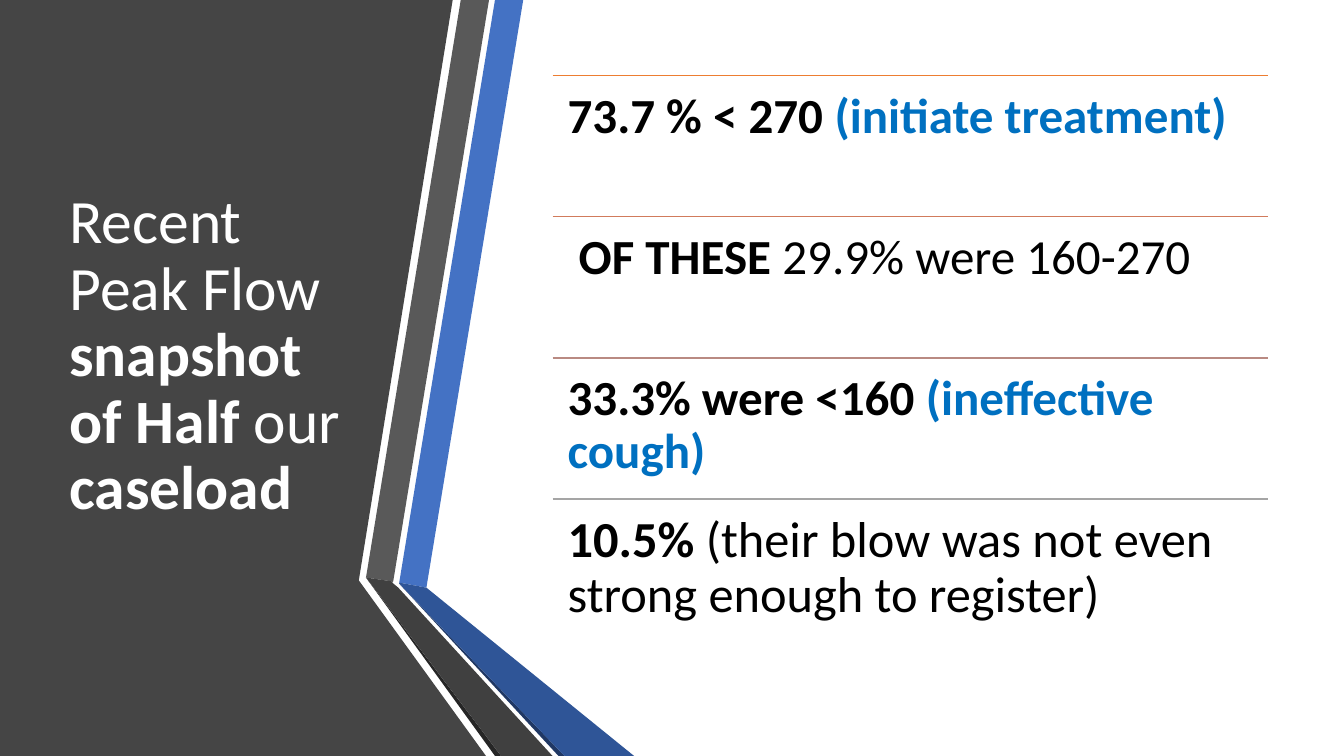
from lxml.etree import SubElement
from pptx import Presentation
from pptx.dml.color import RGBColor
from pptx.enum.shapes import MSO_CONNECTOR
from pptx.enum.text import MSO_ANCHOR
from pptx.oxml.ns import qn
from pptx.util import Inches, Pt

# Content: each run is (text, bold, colour name)
TITLE = [
    ("Recent Peak Flow ", False, "light"),
    ("snapshot of Half ", True, "light"),
    ("our ", False, "light"),
    ("caseload", True, "light"),
]
FINDINGS = [
    {"rule": "ED7D31", "size": "finding", "runs": [
        ("73.7 % < 270 ", True, "dark"),
        ("(initiate treatment)", True, "accent")]},
    {"rule": "D17B5C", "size": "finding", "runs": [
        (" ", False, "dark"),
        ("OF THESE ", True, "dark"),
        ("29.9% were 160-270", False, "dark")]},
    {"rule": "B98A82", "size": "finding", "runs": [
        ("33.3% were <160 ", True, "dark"),
        ("(ineffective cough)", True, "accent")]},
    {"rule": "A5A5A5", "size": "last_finding", "runs": [
        ("10.5% ", True, "dark"),
        ("(their blow was not even strong enough to register)", False, "dark")]},
]

# Outlines of the side panel and the folded ribbons, back to front
PANEL_SHAPES = [
    ("panel", [(0, 0), (4.49, 0), (3.56, 5.75), (3.56, 5.76), (4.82, 7.5), (0, 7.5)]),
    ("blue", [(3.96, 5.78), (4.23, 5.83), (5.19, 0), (4.91, 0)]),
    ("grey", [(4.85, 0), (4.57, 0), (3.63, 5.73), (3.9, 5.77)]),
    ("grey_edge", [(3.63, 5.73), (4.91, 7.5), (4.97, 7.5)]),
    ("blue_edge", [(3.96, 5.79), (5.54, 7.5), (5.6, 7.5)]),
    ("blue_fold", [(3.96, 5.79), (5.6, 7.5), (6.29, 7.5), (4.23, 5.83), (3.96, 5.78)]),
    ("grey_fold", [(5.48, 7.5), (3.95, 5.83), (3.89, 5.78), (3.9, 5.77),
                   (3.63, 5.73), (4.97, 7.5)]),
]

THEME = {
    "font": "Calibri",
    "sizes": {"title": 44, "finding": 35, "last_finding": 36},
    "colours": {
        "light": "FFFFFF", "dark": "000000", "accent": "0070C0",
        "panel": "454545", "blue": "4472C4", "blue_edge": "203864",
        "blue_fold": "2F5597", "grey": "595959", "grey_edge": "262626",
        "grey_fold": "404040",
    },
}
LIST_LEFT, LIST_TOP, LIST_WIDTH, ROW_HEIGHT = 5.48, 0.75, 7.1, 1.4


def colour(name):
    return RGBColor.from_string(THEME["colours"][name])


def add_outline(slide, fill_name, points):
    corners = [(Inches(x), Inches(y)) for x, y in points]
    builder = slide.shapes.build_freeform(*corners[0])
    builder.add_line_segments(corners[1:], close=True)
    shape = builder.convert_to_shape()
    shape.shadow.inherit = False
    shape.fill.solid()
    shape.fill.fore_color.rgb = colour(fill_name)
    shape.line.fill.background()


def add_text(slide, box, runs, size_name, frame_format):
    shape = slide.shapes.add_textbox(*[Inches(value) for value in box])
    frame = shape.text_frame
    for name, value in {"word_wrap": True, **frame_format}.items():
        setattr(frame, name, value)
    paragraph = frame.paragraphs[0]
    paragraph.line_spacing = 0.9
    for text, bold, colour_name in runs:
        run = paragraph.add_run()
        run.text = text
        font_format = {"name": THEME["font"], "bold": bold,
                       "size": Pt(THEME["sizes"][size_name])}
        for name, value in font_format.items():
            setattr(run.font, name, value)
        run.font.color.rgb = colour(colour_name)


def add_rule(slide, top, rule_colour):
    connector = slide.shapes.add_connector(
        MSO_CONNECTOR.STRAIGHT, Inches(LIST_LEFT), Inches(top),
        Inches(LIST_LEFT + LIST_WIDTH), Inches(top))
    connector.line.color.rgb = RGBColor.from_string(rule_colour)
    connector.line.width = Pt(1)
    SubElement(connector._element.spPr, qn("a:effectLst"))


def main():
    presentation = Presentation()
    presentation.slide_width = Inches(13.33)
    presentation.slide_height = Inches(7.5)
    slide = presentation.slides.add_slide(presentation.slide_layouts[6])

    # Side panel with ribbons
    for fill_name, points in PANEL_SHAPES:
        add_outline(slide, fill_name, points)

    # Title
    add_text(slide, (0.59, 0.75, 3.04, 5.58), TITLE, "title",
             {"vertical_anchor": MSO_ANCHOR.MIDDLE})

    # Findings, each under its own rule
    margins = {f"margin_{side}": Inches(0.15)
               for side in ("left", "top", "right", "bottom")}
    for index, finding in enumerate(FINDINGS):
        top = LIST_TOP + index * ROW_HEIGHT
        add_rule(slide, top, finding["rule"])
        add_text(slide, (LIST_LEFT, top, LIST_WIDTH, ROW_HEIGHT),
                 finding["runs"], finding["size"],
                 {"vertical_anchor": MSO_ANCHOR.TOP, **margins})

    presentation.save("out.pptx")


if __name__ == "__main__":
    main()
